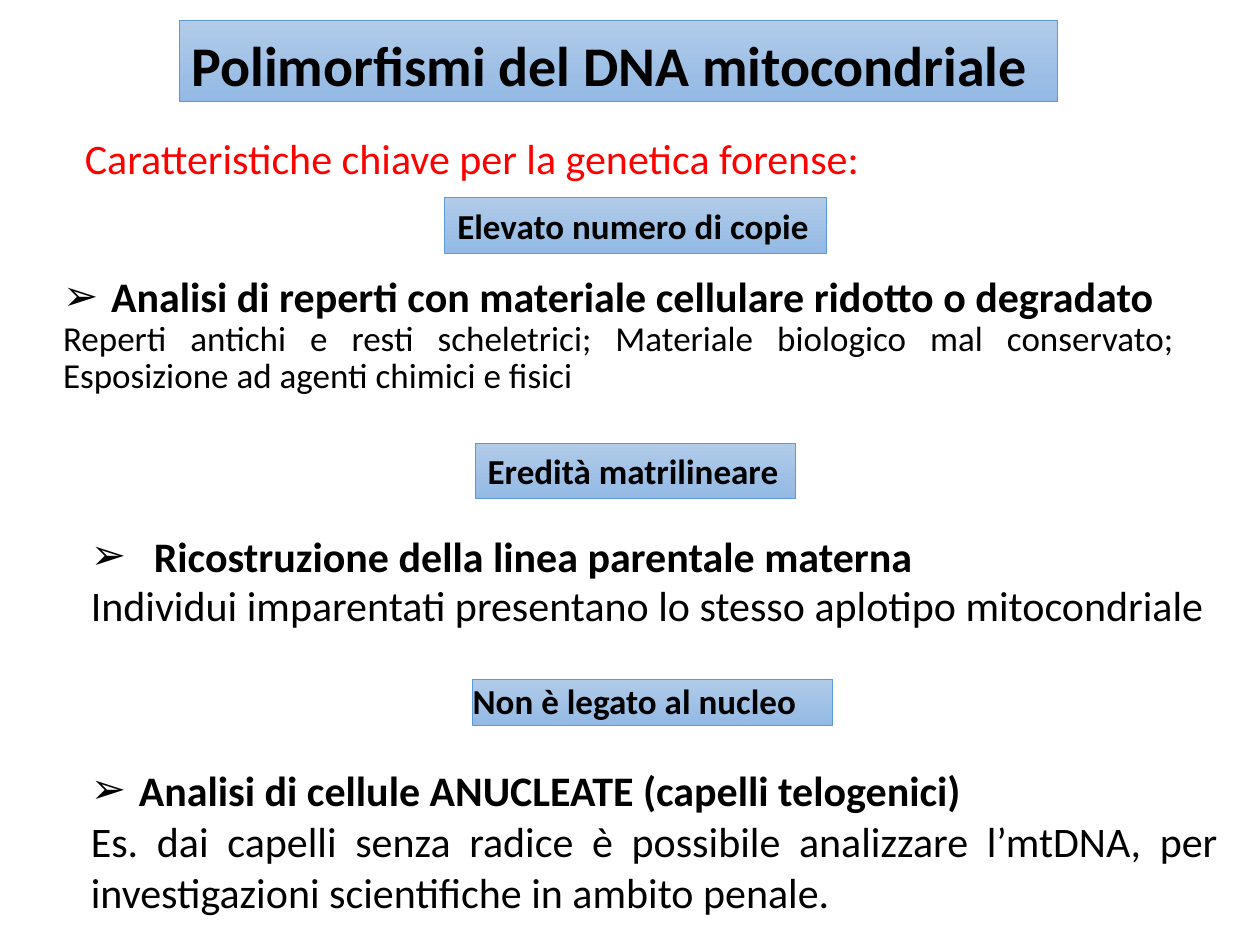
from pptx import Presentation
from pptx.dml.color import RGBColor
from pptx.enum.shapes import MSO_SHAPE
from pptx.enum.text import MSO_ANCHOR, MSO_AUTO_SIZE, PP_ALIGN
from pptx.oxml.ns import qn
from pptx.util import Cm, Pt
from lxml import etree

RECT = MSO_SHAPE.RECTANGLE
TOP, MIDDLE = MSO_ANCHOR.TOP, MSO_ANCHOR.MIDDLE
NO_FIT = MSO_AUTO_SIZE.NONE
LEFT, JUSTIFY = PP_ALIGN.LEFT, PP_ALIGN.JUSTIFY
FONT, BLACK, RED = "Calibri", "000000", "FF0000"
BLUE_TOP, BLUE_BOTTOM, BLUE_LINE = "B1CBE9", "93B9E4", "5B9BD5"

# Content: boxes are left, top, width, height in cm
TITLE = ("Polimorfismi del DNA mitocondriale", (3.61, 0.41, 17.7, 1.63))
INTRO = ("Caratteristiche chiave per la genetica forense:", (1.68, 2.64, 15.85, 1.09))
LABELS = [
    ("Elevato numero di copie", (8.97, 3.99, 7.7, 1.12), 0.25, 0.13, 3.6),
    ("Eredità matrilineare", (9.58, 8.94, 6.45, 1.12), 0.25, 0.13, 3.6),
    ("Non è legato al nucleo", (9.53, 13.69, 7.26, 0.94), 0, 0, 0),
]
# Heading, its indent and alignment, then detail with size, line height, space before
LISTS = [
    ("Analisi di reperti con materiale cellulare ridotto o degradato", 0.97, JUSTIFY,
     "Reperti antichi e resti scheletrici; Materiale biologico mal conservato; "
     "Esposizione ad agenti chimici e fisici", 20, 21.2, 0, (1.24, 5.44, 22.43, 2.54)),
    ("Ricostruzione della linea parentale materna", 1.27, JUSTIFY,
     "Individui imparentati presentano lo stesso aplotipo mitocondriale",
     24, 28.4, 0, (1.8, 10.67, 23.19, 2.03)),
    ("Analisi di cellule ANUCLEATE (capelli telogenici)", 0.97, LEFT,
     "Es. dai capelli senza radice è possibile analizzare l’mtDNA, per "
     "investigazioni scientifiche in ambito penale.",
     24, 29, 0.4, (1.8, 15.39, 22.76, 3.1)),
]


def rgb(value):
    return RGBColor.from_string(value)


def place(sp, box, inset_top=0.03, anchor=TOP):
    sp.left, sp.top, sp.width, sp.height = (Cm(v) for v in box)
    tf = sp.text_frame
    tf.word_wrap, tf.auto_size, tf.vertical_anchor = True, NO_FIT, anchor
    tf.margin_left = tf.margin_right = tf.margin_bottom = 0
    tf.margin_top = Cm(inset_top)
    return tf


def write(p, text, size=24, color=BLACK, bold=False, align=LEFT, before=0,
          line=1.0, margin=0.03, hanging=0, bullet=None):
    p.alignment, p.space_before, p.space_after = align, Pt(before), Pt(0)
    p.line_spacing = line
    pPr = p._p.get_or_add_pPr()
    pPr.set("marL", str(Cm(margin)))
    pPr.set("indent", str(-Cm(hanging)))
    if bullet:
        etree.SubElement(pPr, qn("a:buFont")).set("typeface", FONT)
        etree.SubElement(pPr, qn("a:buChar")).set("char", bullet)
    else:
        etree.SubElement(pPr, qn("a:buNone"))
    r = p.add_run()
    r.text = text
    r.font.name, r.font.size, r.font.bold = FONT, Pt(size), bold
    r.font.color.rgb = rgb(color)


def paint_blue(sp):
    sp.fill.gradient()
    sp.fill.gradient_angle = 270
    for stop, color in zip(sp.fill.gradient_stops, (BLUE_TOP, BLUE_BOTTOM)):
        stop.color.rgb = rgb(color)
    sp.line.color.rgb = rgb(BLUE_LINE)
    sp.line.width = Pt(0.5)


def main():
    prs = Presentation()
    prs.slide_width, prs.slide_height = Cm(25.4), Cm(19.05)
    slide = prs.slides.add_slide(prs.slide_layouts[4])
    intro, *bodies = list(slide.placeholders)[1:]

    # Title and introduction
    text, box = TITLE
    title = slide.shapes.title
    tf = place(title, box, 0.13, MIDDLE)
    paint_blue(title)
    write(tf.paragraphs[0], text, size=32, bold=True, before=3.6, margin=0.25)
    text, box = INTRO
    write(place(intro, box).paragraphs[0], text, color=RED, before=1)

    # Blue labels
    for text, box, margin, inset, before in LABELS:
        sp = slide.shapes.add_shape(RECT, *(Cm(v) for v in box))
        sp.shadow.inherit = False
        paint_blue(sp)
        write(place(sp, box, inset).paragraphs[0], text, size=20, bold=True,
              before=before, margin=margin)

    # Arrow-bulleted headings with their details
    for sp, (head, indent, align, detail, size, line, before, box) in zip(bodies, LISTS):
        tf = place(sp, box)
        write(tf.paragraphs[0], head, bold=True, align=align, before=1,
              line=Pt(28.4), margin=indent + 0.03, hanging=indent, bullet="➢")
        write(tf.add_paragraph(), detail, size=size, align=JUSTIFY,
              before=before, line=Pt(line))

    prs.save("out.pptx")


if __name__ == "__main__":
    main()
